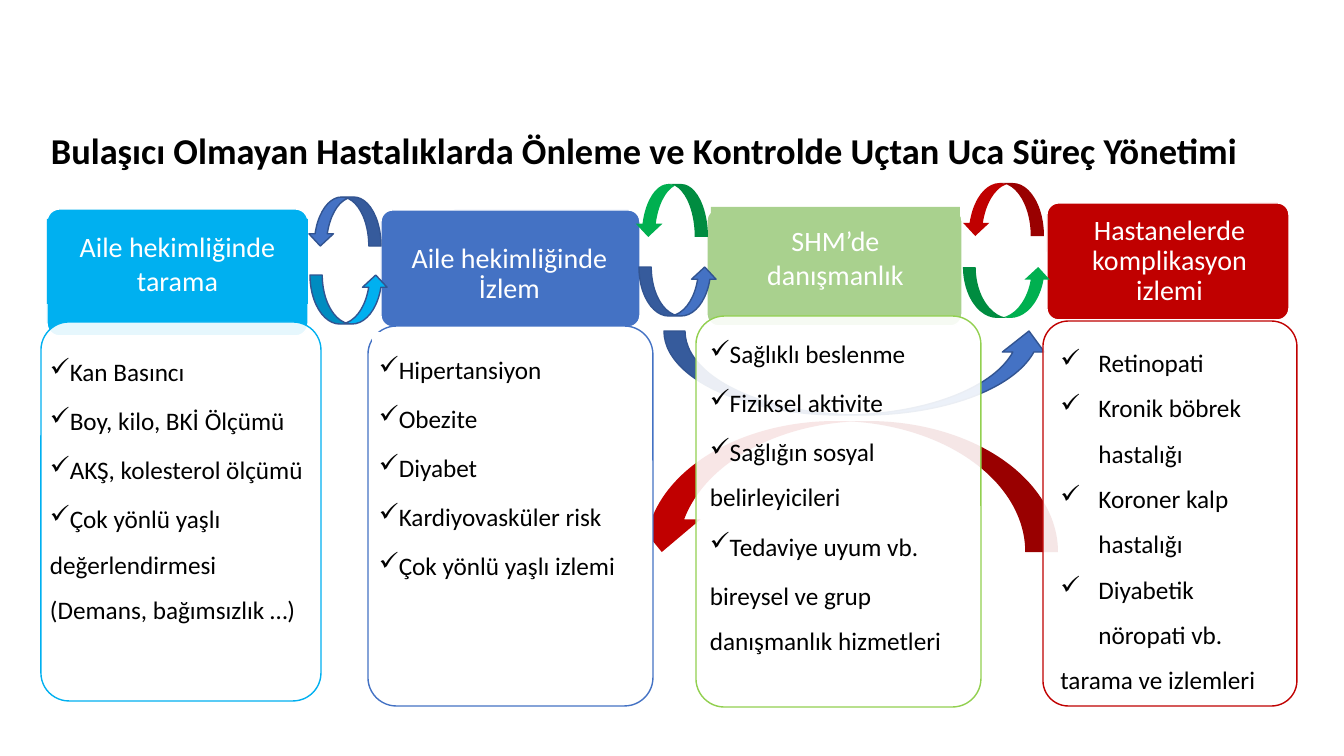
from dataclasses import dataclass

from lxml.etree import SubElement
from pptx import Presentation
from pptx.dml.color import RGBColor
from pptx.enum.shapes import MSO_SHAPE
from pptx.enum.text import MSO_ANCHOR, PP_ALIGN
from pptx.oxml.ns import qn
from pptx.util import Emu, Pt

PX = 914400 / 100.8


@dataclass(frozen=True)
class Theme:
    font: str = "Calibri"
    title_size: int = 26
    header_size: int = 20
    body_size: int = 18
    ink: str = "000000"
    white: str = "FFFFFF"
    cyan: str = "00B0F0"
    blue: str = "4472C4"
    navy: str = "325491"
    sage: str = "A9D18E"
    lime: str = "92D050"
    green: str = "00B050"
    red: str = "C00000"


theme = Theme()


def add_block(kind, bounds, fill=None, line=None, rotation=0, alpha=100):
    """Add a preset shape; bounds are left, top, width, height in px, alpha is in percent."""
    block = slide.shapes.add_shape(kind, *(Emu(round(n * PX)) for n in bounds))
    block.shadow.inherit = False
    block.rotation = rotation
    if kind == MSO_SHAPE.ROUNDED_RECTANGLE:
        block.adjustments[0] = 0.1
    if fill:
        block.fill.solid()
        block.fill.fore_color.rgb = RGBColor.from_string(fill)
        if alpha < 100:
            color = block.fill._xPr.find(qn("a:solidFill"))[0]
            SubElement(color, qn("a:alpha"), val=str(alpha * 1000))
    else:
        block.fill.background()
    if line:
        block.line.color.rgb = RGBColor.from_string(line)
        block.line.width = Pt(1)
    else:
        block.line.fill.background()
    return block


def write(block, lines, size, color, insets, anchor=MSO_ANCHOR.MIDDLE, align=PP_ALIGN.LEFT,
          spacing=1.0, after=0, bold=False, bullets=0, margin=0, hang=0):
    """Fill a block with paragraphs; the first `bullets` of them get a check mark."""
    frame = block.text_frame
    frame.word_wrap = True
    frame.vertical_anchor = anchor
    (frame.margin_left, frame.margin_top, frame.margin_right,
     frame.margin_bottom) = (Emu(round(n * PX)) for n in insets)
    for i, line in enumerate(lines):
        paragraph = frame.add_paragraph() if i else frame.paragraphs[0]
        paragraph.alignment = align
        paragraph.line_spacing = spacing
        paragraph.space_after = Pt(after)
        if i < bullets:
            properties = paragraph._p.get_or_add_pPr()
            properties.set("marL", str(round(margin * PX)))
            properties.set("indent", str(round(-hang * PX)))
            SubElement(properties, qn("a:buChar"), char="✓")
        run = paragraph.add_run()
        run.text = line
        run.font.name = theme.font
        run.font.size = Pt(size)
        run.font.bold = bold
        run.font.color.rgb = RGBColor.from_string(color)


presentation = Presentation()
presentation.slide_width = Emu(round(1344 * PX))
presentation.slide_height = Emu(round(756 * PX))
slide = presentation.slides.add_slide(presentation.slide_layouts[6])

# Long arrows running behind the counselling stage
add_block(MSO_SHAPE.CURVED_UP_ARROW, (629, 421, 429, 131), theme.red, rotation=180)
add_block(MSO_SHAPE.CURVED_UP_ARROW, (664, 331, 386, 84), theme.blue, theme.navy)

# Stage headers: text, frame, label area, label fill, frame fill, inset, line spacing, space after
headers = [
    ("Aile hekimliğinde tarama", (47, 209, 261, 127), (47, 219, 261, 85),
     theme.cyan, theme.cyan, 9, 1.0, 0),
    ("Aile hekimliğinde İzlem", (381, 210, 259, 117), (380, 229, 259, 88),
     None, theme.blue, 7, 0.9, 7),
    ("SHM’de danışmanlık", (707, 209, 255, 117), (711, 207, 249, 92),
     theme.sage, theme.sage, 19, 1.0, 0),
    ("Hastanelerde komplikasyon izlemi", (1047, 203, 242, 117), (1058, 209, 223, 102),
     theme.red, theme.red, 7, 0.9, 7),
]
# Stage cards: frame, outline, opacity, list area, list fill, inset, margin, hang, checks, closing
cards = [
    ((41, 322, 280, 379), theme.cyan, 90, (41, 332, 280, 369), None, (9, 9), 0, 0,
     ["Kan Basıncı", "Boy, kilo, BKİ Ölçümü", "AKŞ, kolesterol ölçümü",
      "Çok yönlü yaşlı değerlendirmesi (Demans, bağımsızlık …)"], []),
    ((368, 326, 285, 380), theme.blue, 100, (372, 332, 268, 348), theme.white, (7, 7), 0, 38,
     ["Hipertansiyon", "Obezite", "Diyabet", "Kardiyovasküler risk",
      "Çok yönlü yaşlı izlemi"], []),
    ((696, 316, 285, 391), theme.lime, 90, (703, 316, 267, 380), None, (7, 7), 0, 31,
     ["Sağlıklı beslenme", "Fiziksel aktivite", "Sağlığın sosyal belirleyicileri",
      "Tedaviye uyum vb."], ["bireysel ve grup danışmanlık hizmetleri"]),
    ((1043, 321, 254, 385), theme.red, 90, None, None, (10, 5), 38, 38,
     ["Retinopati", "Kronik böbrek hastalığı", "Koroner kalp hastalığı",
      "Diyabetik nöropati vb."], ["tarama ve izlemleri"]),
]
for header, card in zip(headers, cards):
    heading, frame, label_area, label_fill, fill, inset, spacing, after = header
    add_block(MSO_SHAPE.ROUNDED_RECTANGLE, frame, fill, theme.white)
    label = add_block(MSO_SHAPE.RECTANGLE, label_area, label_fill)
    write(label, [heading], theme.header_size, theme.white,
          (inset, inset, inset, (inset + 1) // 2), align=PP_ALIGN.CENTER,
          spacing=spacing, after=after)

    frame, outline, opacity, list_area, list_fill, inset, margin, hang, checks, closing = card
    checklist = add_block(MSO_SHAPE.ROUNDED_RECTANGLE, frame, theme.white, outline, alpha=opacity)
    anchor, after = MSO_ANCHOR.MIDDLE, 0
    if list_area:
        checklist = add_block(MSO_SHAPE.RECTANGLE, list_area, list_fill)
        anchor, after = MSO_ANCHOR.TOP, 2.7
    write(checklist, checks + closing, theme.body_size, theme.ink, inset * 2, anchor,
          spacing=1.5, after=after, bullets=len(checks), margin=margin, hang=hang)

title = slide.shapes.add_textbox(*(Emu(round(n * PX)) for n in (41, 128, 1302, 49)))
write(title, ["Bulaşıcı Olmayan Hastalıklarda Önleme ve Kontrolde Uçtan Uca Süreç Yönetimi"],
      theme.title_size, theme.ink, (10, 5, 10, 5), spacing=0.9, bold=True)

# Pairs of arrows cycling between neighbouring stages
cycle_arrows = [
    ((308, 197, 73, 49), theme.blue, theme.navy, 180),
    ((635, 184, 73, 53), theme.green, None, 180),
    ((962, 183, 82, 53), theme.red, None, 180),
    ((310, 275, 78, 49), theme.cyan, theme.navy, 0),
    ((639, 267, 78, 49), theme.blue, theme.navy, 0),
    ((963, 267, 88, 51), theme.green, None, 0),
]
for bounds, fill, outline, rotation in cycle_arrows:
    add_block(MSO_SHAPE.CURVED_UP_ARROW, bounds, fill, outline, rotation)

presentation.save("out.pptx")
